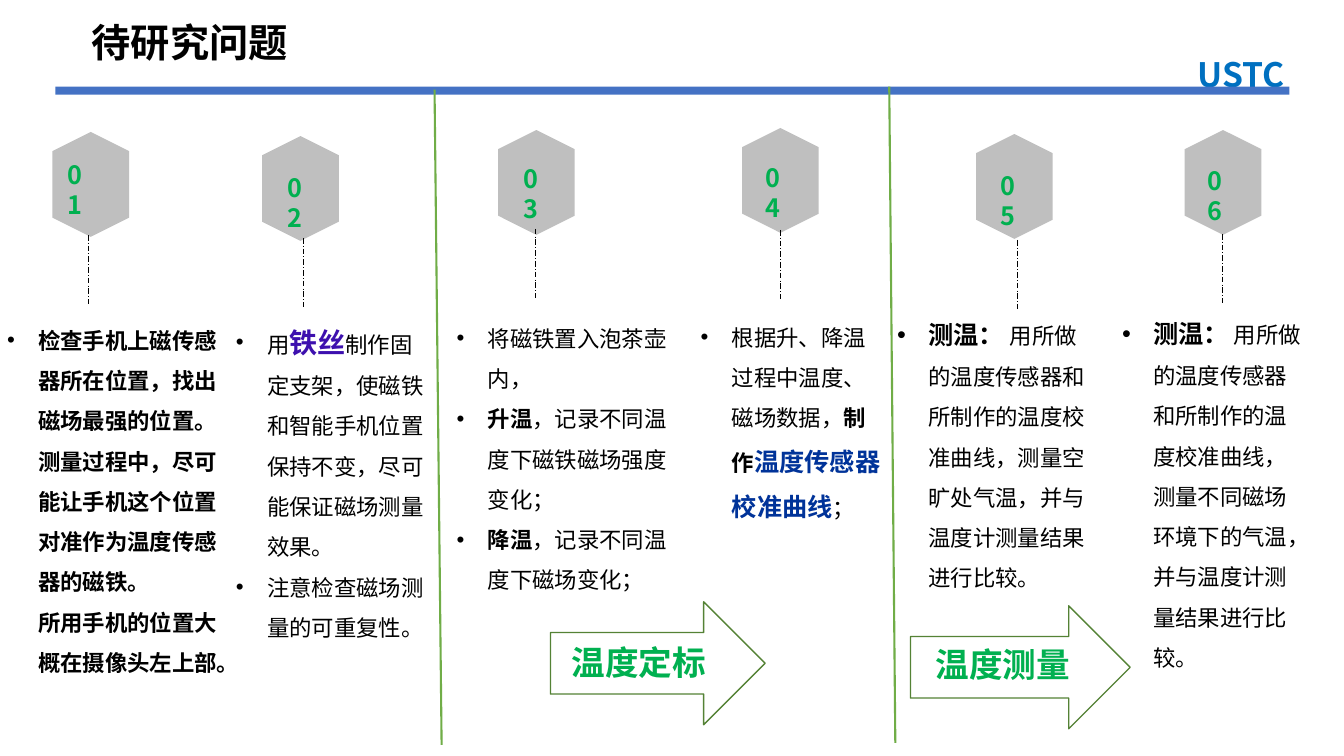
from dataclasses import dataclass

from lxml.etree import SubElement
from pptx import Presentation
from pptx.dml.color import RGBColor
from pptx.enum.dml import MSO_LINE
from pptx.enum.shapes import MSO_CONNECTOR, MSO_SHAPE
from pptx.enum.text import MSO_ANCHOR, MSO_AUTO_SIZE, PP_ALIGN
from pptx.oxml import parse_xml
from pptx.oxml.ns import nsdecls, qn
from pptx.util import Inches, Pt


@dataclass(frozen=True)
class TextStyle:
    size: int
    color: str = "000000"
    bold: bool = False


@dataclass(frozen=True)
class Theme:
    font: str = "Noto Sans CJK SC"
    bar: str = "4472C4"
    hexagon: str = "BFBFBF"
    dash: str = "000000"
    divider: str = "70AD47"
    arrow: str = "548235"
    outline: str = "FFFFFF"
    title: TextStyle = TextStyle(28, bold=True)
    school: TextStyle = TextStyle(24, "0070C0", True)
    number: TextStyle = TextStyle(18, "00B050", True)
    stage: TextStyle = TextStyle(24, "00B050", True)
    plain: TextStyle = TextStyle(16)
    strong: TextStyle = TextStyle(16, bold=True)
    lead: TextStyle = TextStyle(18, bold=True)
    wire: TextStyle = TextStyle(20, "3D10AE", True)
    curve: TextStyle = TextStyle(18, "003399", True)


THEME = Theme()
PLAIN, STRONG, LEAD = THEME.plain, THEME.strong, THEME.lead
HEXAGON_SIZE = (1.04, 0.76)
NUMBER_SIZE = (0.47, 0.4)
DASH_LENGTH = 0.69
HANGING = 0.31


@dataclass
class Step:
    hexagon: tuple
    number: tuple
    dash: tuple
    area: tuple
    items: list
    closing: str = ""


STEPS = [
    Step((0.38, 1.45), (0.57, 1.53), (0.88, 2.33), (-0.03, 3.06, 2.39, 3.74),
         [[("检查手机上磁传感器所在位置，找出磁场最强的位置。测量过程中，"
            "尽可能让手机这个位置对准作为温度传感器的磁铁。", STRONG)]],
         "所用手机的位置大概在摄像头左上部。"),
    Step((2.46, 1.49), (2.75, 1.66), (3.01, 2.36), (2.24, 3.01, 2.07, 3.43),
         [[("用", PLAIN), ("铁丝", THEME.wire),
           ("制作固定支架，使磁铁和智能手机位置保持不变，尽可能保证磁场测量效果。", PLAIN)],
          [("注意检查磁场测量的可重复性。", PLAIN)]]),
    Step((4.8, 1.43), (5.09, 1.57), (5.31, 2.27), (4.43, 3.04, 2.47, 2.93),
         [[("将磁铁置入泡茶壶内，", PLAIN)],
          [("升温", STRONG), ("，记录不同温度下磁铁磁场强度变化；", PLAIN)],
          [("降温", STRONG), ("，记录不同温度下磁场变化；", PLAIN)]]),
    Step((7.22, 1.41), (7.49, 1.56), (7.74, 2.28), (6.85, 3.03, 2.04, 2.27),
         [[("根据升、降温过程中温度、磁场数据，", PLAIN), ("制作", STRONG),
           ("温度传感器校准曲线", THEME.curve), ("；", PLAIN)]]),
    Step((9.54, 1.47), (9.83, 1.64), (10.09, 2.38), (8.8, 2.97, 2.09, 2.98),
         [[("测温： ", LEAD),
           ("用所做的温度传感器和所制作的温度校准曲线，测量空旷处气温，"
            "并与温度计测量结果进行比较。", PLAIN)]]),
    Step((11.61, 1.43), (11.88, 1.59), (12.12, 2.32), (11.03, 2.96, 1.99, 3.79),
         [[("测温：", LEAD),
           (" 用所做的温度传感器和所制作的温度校准曲线，测量不同磁场环境下的气温，"
            "并与温度计测量结果进行比较。", PLAIN)]]),
]
STAGES = [
    ("温度定标", (5.57, 6.32, 1.82, 0.5), (5.46, 5.97, 2.13, 1.22)),
    ("温度测量", (9.18, 6.34, 1.98, 0.5), (9.03, 6.01, 2.18, 1.22)),
]
DIVIDERS = [((4.31, 0.89), (4.38, 7.39)), ((8.82, 0.86), (8.88, 7.37))]


class SlideBuilder:
    def __init__(self, deck, theme):
        self.theme = theme
        # The Comparison layout offers the most body placeholders.
        self.page = deck.slides.add_slide(deck.slide_layouts[4])
        self.bodies = [holder for holder in self.page.placeholders
                       if holder.placeholder_format.idx in range(1, 5)]

    def place(self, box, area, wrap=True):
        box.left, box.top, box.width, box.height = map(Inches, area)
        frame = box.text_frame
        frame.word_wrap = wrap
        frame.auto_size = MSO_AUTO_SIZE.NONE
        frame.vertical_anchor = MSO_ANCHOR.TOP
        frame.margin_left = frame.margin_right = Inches(0.1)
        frame.margin_top = frame.margin_bottom = Inches(0.05)
        return frame

    def format_run(self, span, style):
        span.font.name = self.theme.font
        span.font.size = Pt(style.size)
        span.font.bold = style.bold
        span.font.color.rgb = RGBColor.from_string(style.color)
        latin = span.font._element.find(qn("a:latin"))
        latin.addnext(parse_xml(f'<a:ea {nsdecls("a")} typeface="{self.theme.font}"/>'))

    def title(self, text, area):
        frame = self.place(self.page.shapes.title, area, wrap=False)
        frame.text = text
        para = frame.paragraphs[0]
        para.alignment = PP_ALIGN.LEFT
        self.format_run(para.runs[0], self.theme.title)

    def label(self, text, area, style, align=PP_ALIGN.LEFT):
        box = self.page.shapes.add_textbox(0, 0, 0, 0)
        frame = self.place(box, area)
        frame.text = text
        para = frame.paragraphs[0]
        para.alignment = align
        self.format_run(para.runs[0], style)
        return para.runs[0]

    def outlined_label(self, text, area, style):
        span = self.label(text, area, style, PP_ALIGN.CENTER)
        span.font._element.insert(0, parse_xml(
            f'<a:ln {nsdecls("a")} w="{Pt(0.75)}"><a:solidFill>'
            f'<a:srgbClr val="{self.theme.outline}"/></a:solidFill></a:ln>'))

    def bullet_list(self, items, area, closing=""):
        """Fill the next free body placeholder, or a text box when none is left."""
        box = (self.bodies.pop(0) if self.bodies
               else self.page.shapes.add_textbox(0, 0, 0, 0))
        frame = self.place(box, area)
        entries = [(item, True) for item in items]
        if closing:
            entries.append(([(closing, STRONG)], False))
        for index, (spans, bulleted) in enumerate(entries):
            para = frame.add_paragraph() if index else frame.paragraphs[0]
            para.alignment = PP_ALIGN.LEFT
            para.line_spacing = 1.5
            para.space_before = para.space_after = Pt(0)
            self.set_bullet(para, bulleted)
            for text, style in spans:
                span = para.add_run()
                span.text = text
                self.format_run(span, style)

    def set_bullet(self, para, bulleted):
        properties = para._p.get_or_add_pPr()
        properties.set("marL", str(Inches(HANGING)))
        properties.set("indent", str(-Inches(HANGING) if bulleted else 0))
        if bulleted:
            SubElement(properties, qn("a:buFont"), typeface="Arial")
            SubElement(properties, qn("a:buChar"), char="•")
        else:
            SubElement(properties, qn("a:buNone"))

    def shape(self, kind, area, fill=None, line=None, rotation=0):
        shape = self.page.shapes.add_shape(kind, *map(Inches, area))
        shape.shadow.inherit = False
        shape.rotation = rotation
        if fill:
            shape.fill.solid()
            shape.fill.fore_color.rgb = RGBColor.from_string(fill)
        else:
            shape.fill.background()
        if line:
            shape.line.color.rgb = RGBColor.from_string(line)
            shape.line.width = Pt(1)
        else:
            shape.line.fill.background()

    def line(self, start, end, color, width, dash=None):
        line = self.page.shapes.add_connector(
            MSO_CONNECTOR.STRAIGHT, *map(Inches, (*start, *end)))
        line.line.color.rgb = RGBColor.from_string(color)
        line.line.width = Pt(width)
        if dash:
            line.line.dash_style = dash
        SubElement(line._element.spPr, qn("a:effectLst"))


def main():
    deck = Presentation()
    deck.slide_width, deck.slide_height = Inches(13.33), Inches(7.5)
    slide = SlideBuilder(deck, THEME)
    slide.title("待研究问题", (0.81, 0.13, 2.17, 0.57))
    slide.outlined_label("USTC", (11.29, 0.49, 2.04, 0.5), THEME.school)
    slide.shape(MSO_SHAPE.RECTANGLE, (0.55, 0.86, 12.24, 0.08), fill=THEME.bar)
    for number, step in enumerate(STEPS, 1):
        slide.shape(MSO_SHAPE.HEXAGON, step.hexagon + HEXAGON_SIZE,
                    fill=THEME.hexagon, rotation=90)
        left, top = step.dash
        slide.line(step.dash, (left, top + DASH_LENGTH), THEME.dash, 0.5,
                   MSO_LINE.LONG_DASH_DOT)
        slide.bullet_list(step.items, step.area, step.closing)
        slide.label(f"{number:02}", step.number + NUMBER_SIZE, THEME.number)
    for text, text_area, arrow_area in STAGES:
        slide.label(text, text_area, THEME.stage)
        slide.shape(MSO_SHAPE.RIGHT_ARROW, arrow_area, line=THEME.arrow)
    for start, end in DIVIDERS:
        slide.line(start, end, THEME.divider, 1.5)
    deck.save("out.pptx")


if __name__ == "__main__":
    main()
